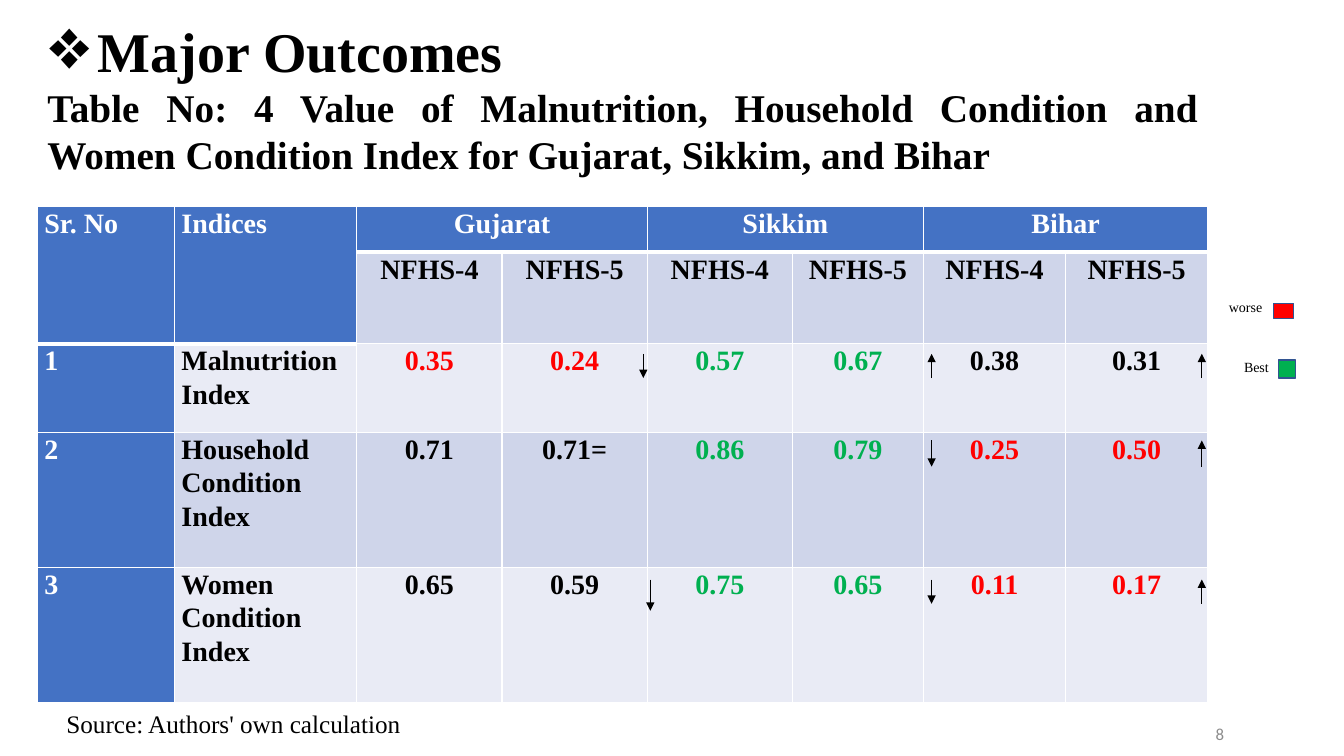
from lxml.etree import SubElement
from pptx import Presentation
from pptx.dml.color import RGBColor
from pptx.enum.shapes import MSO_CONNECTOR, MSO_SHAPE
from pptx.enum.text import MSO_ANCHOR, MSO_AUTO_SIZE, PP_ALIGN
from pptx.oxml.ns import qn
from pptx.util import Inches, Pt

BLACK = RGBColor(0x00, 0x00, 0x00)
WHITE = RGBColor(0xFF, 0xFF, 0xFF)
RED = RGBColor(0xFF, 0x00, 0x00)
GREEN = RGBColor(0x00, 0xB0, 0x50)
BLUE = RGBColor(0x44, 0x72, 0xC4)
OUTLINE = RGBColor(0x32, 0x54, 0x91)
GREY = RGBColor(0x8C, 0x8C, 0x8C)
DARK_BAND = RGBColor(0xCF, 0xD5, 0xEA)
LIGHT_BAND = RGBColor(0xE9, 0xEB, 0xF5)

HEADING = "Major Outcomes"
CAPTION = ("Table No: 4 Value of Malnutrition, Household Condition and "
           "Women Condition Index for Gujarat, Sikkim, and Bihar")
SOURCE = "Source: Authors' own calculation"
STATES = ["Gujarat", "Sikkim", "Bihar"]
SURVEYS = ["NFHS-4", "NFHS-5"]
INDICES = [
    ("Malnutrition Index", ["0.35", "0.24", "0.57", "0.67", "0.38", "0.31"], [RED, GREEN, BLACK]),
    ("Household Condition Index", ["0.71", "0.71=", "0.86", "0.79", "0.25", "0.50"], [BLACK, GREEN, RED]),
    ("Women Condition Index", ["0.65", "0.59", "0.75", "0.65", "0.11", "0.17"], [BLACK, GREEN, RED]),
]
COLUMN_WIDTHS = [1.36, 1.81, 1.44, 1.44, 1.44, 1.3, 1.41, 1.41]
ROW_HEIGHTS = [0.45, 0.91, 0.88, 1.34, 1.34]
TABLE_LEFT, TABLE_TOP, TABLE_WIDTH = 0.37, 2.05, 11.61
TREND_ARROWS = [
    (3.51, 3.75, [(6.38, "down"), (9.24, "up"), (11.92, "up")]),
    (4.37, 4.63, [(9.24, "down"), (11.92, "up")]),
    (5.75, 5.99, [(9.24, "down"), (11.92, "up")]),
    (5.75, 6.06, [(6.45, "down")]),
]
LEGEND = [
    ("worse", (12.09, 2.91, 1.09, 0.27), RED, (12.63, 3.01, 0.2, 0.15)),
    ("Best", (12.24, 3.51, 0.93, 0.27), GREEN, (12.68, 3.57, 0.17, 0.18)),
]


def write(para, text, size=20, color=BLACK, bold=False, align=PP_ALIGN.LEFT, font="Times New Roman"):
    para.alignment = align
    span = para.add_run()
    span.text = text
    span.font.name = font
    span.font.size = Pt(size)
    span.font.bold = bold
    span.font.color.rgb = color
    return span


def add_label(page, text, bounds, **style):
    box = page.shapes.add_textbox(*map(Inches, bounds))
    box.text_frame.word_wrap = True
    return box, write(box.text_frame.paragraphs[0], text, **style)


def add_title(page):
    title = page.shapes.title
    title.left, title.top, title.width, title.height = map(Inches, (0.37, 0.11, 11.61, 2.12))
    frame = title.text_frame
    frame.word_wrap = True
    frame.auto_size = MSO_AUTO_SIZE.NONE
    frame.vertical_anchor = MSO_ANCHOR.TOP
    heading = frame.paragraphs[0]
    write(heading, HEADING, size=40, bold=True, align=PP_ALIGN.JUSTIFY)
    properties = heading._p.get_or_add_pPr()
    properties.set("marL", str(Inches(0.5)))
    properties.set("indent", str(Inches(-0.5)))
    SubElement(properties, qn("a:buFont"), typeface="Wingdings 2")
    SubElement(properties, qn("a:buChar"), char="❖")
    properties.find(qn("a:buFont")).set("typeface", "Times New Roman")
    write(frame.add_paragraph(), CAPTION, size=28, bold=True, align=PP_ALIGN.JUSTIFY)


def set_borders(cell, heavy_sides):
    properties = cell._tc.get_or_add_tcPr()
    for side in "LRTB":
        width = Pt(3 if side in heavy_sides else 1)
        line = SubElement(properties, qn("a:ln" + side), w=str(width))
        fill = SubElement(line, qn("a:solidFill"))
        SubElement(fill, qn("a:srgbClr"), val=str(WHITE))


def fill_cell(cell, text, row, column):
    header = row == 0 or column == 0 or (row == 1 and column == 1)
    if header:
        background, color = BLUE, WHITE
    else:
        background, color = (DARK_BAND if row % 2 else LIGHT_BAND), BLACK
    if row > 1 and column > 1:
        color = INDICES[row - 2][2][(column - 2) // 2]
    header_end = 1 if column < 2 else 0
    heavy_sides = ("B" if row == header_end else "") + ("T" if row == header_end + 1 else "")
    set_borders(cell, heavy_sides)
    cell.fill.solid()
    cell.fill.fore_color.rgb = background
    cell.margin_left = cell.margin_right = Inches(0.07)
    cell.margin_top = cell.margin_bottom = 0
    if text:
        para = cell.text_frame.paragraphs[0]
        para.line_spacing = 1.07
        para.space_after = Pt(8)
        align = PP_ALIGN.JUSTIFY if column < 2 else PP_ALIGN.CENTER
        write(para, text, color=color, bold=True, align=align)


def add_index_table(page):
    state_row = [text for state in STATES for text in (state, "")]
    rows = [["Sr. No", "Indices"] + state_row, ["", ""] + SURVEYS * len(STATES)]
    rows += [[str(number), name] + values for number, (name, values, _) in enumerate(INDICES, 1)]
    table = page.shapes.add_table(
        len(rows), len(COLUMN_WIDTHS), Inches(TABLE_LEFT), Inches(TABLE_TOP),
        Inches(TABLE_WIDTH), Inches(sum(ROW_HEIGHTS))).table
    table.first_col = True
    for column, width in zip(table.columns, COLUMN_WIDTHS):
        column.width = Inches(width)
    for row, height in zip(table.rows, ROW_HEIGHTS):
        row.height = Inches(height)
    for column in (0, 1):
        table.cell(0, column).merge(table.cell(1, column))
    for column in (2, 4, 6):
        table.cell(0, column).merge(table.cell(0, column + 1))
    for row, texts in enumerate(rows):
        for column, text in enumerate(texts):
            fill_cell(table.cell(row, column), text, row, column)


def add_arrow(page, x, start, end):
    arrow = page.shapes.add_connector(
        MSO_CONNECTOR.STRAIGHT, Inches(x), Inches(start), Inches(x), Inches(end))
    arrow.line.color.rgb = BLACK
    arrow.line.width = Pt(0.5)
    SubElement(arrow.line._get_or_add_ln(), qn("a:tailEnd"), type="triangle")
    SubElement(arrow._element.spPr, qn("a:effectLst"))


def add_swatch(page, bounds, color):
    swatch = page.shapes.add_shape(MSO_SHAPE.RECTANGLE, *map(Inches, bounds))
    swatch.shadow.inherit = False
    swatch.fill.solid()
    swatch.fill.fore_color.rgb = color
    swatch.line.color.rgb = OUTLINE
    swatch.line.width = Pt(1)


def add_page_number(page):
    box, span = add_label(page, "8", (9.24, 7.05, 3, 0.45), size=12, color=GREY,
                          align=PP_ALIGN.RIGHT, font="Calibri")
    box.text_frame.vertical_anchor = MSO_ANCHOR.MIDDLE


def main():
    deck = Presentation()
    deck.slide_width, deck.slide_height = Inches(13.33), Inches(7.5)
    page = deck.slides.add_slide(deck.slide_layouts[5])
    add_title(page)
    add_index_table(page)
    add_label(page, SOURCE, (0.56, 6.98, 4.99, 0.4), size=18, align=PP_ALIGN.JUSTIFY)
    add_page_number(page)
    for top, bottom, arrows in TREND_ARROWS:
        for x, direction in arrows:
            start, end = (top, bottom) if direction == "down" else (bottom, top)
            add_arrow(page, x, start, end)
    for text, label_bounds, color, swatch_bounds in LEGEND:
        add_label(page, text, label_bounds, size=10)
        add_swatch(page, swatch_bounds, color)
    deck.save("out.pptx")


if __name__ == "__main__":
    main()
